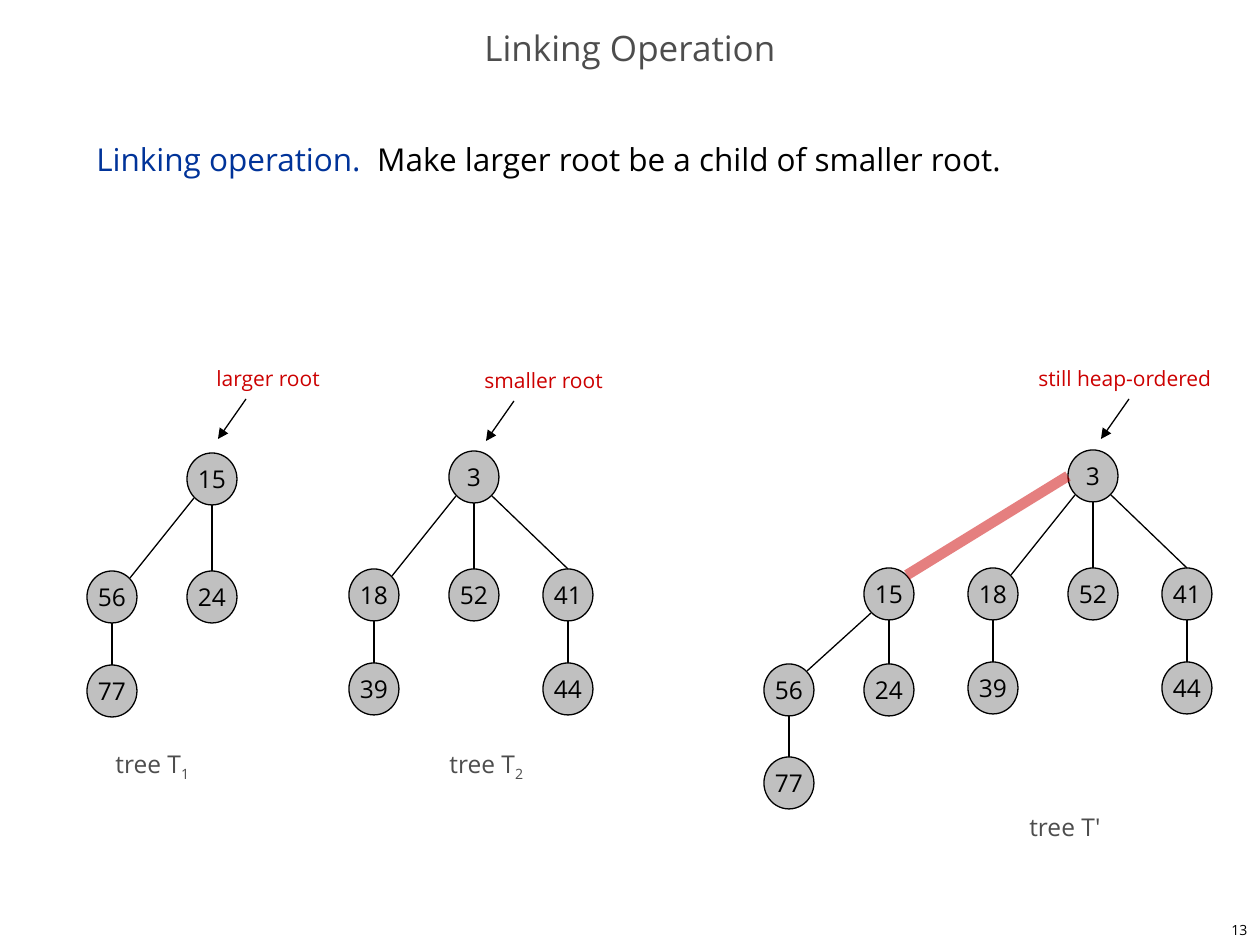
from collections import namedtuple

from lxml.etree import SubElement
from pptx import Presentation
from pptx.dml.color import RGBColor
from pptx.enum.shapes import MSO_CONNECTOR, MSO_SHAPE
from pptx.enum.text import MSO_ANCHOR, PP_ALIGN
from pptx.oxml.ns import qn
from pptx.util import Emu, Pt

Box = namedtuple("Box", "left top width height")
Node = namedtuple("Node", "key parent left top")

SCALE = 914400 / 126
FONT = "Open Sans"
NODE_WIDTH, NODE_HEIGHT = 50, 52
DIAGONAL = 7
WHITE = RGBColor(0xFF, 0xFF, 0xFF)
BLACK = RGBColor(0x00, 0x00, 0x00)
GRAY = RGBColor(0x4D, 0x4D, 0x4D)
SILVER = RGBColor(0xC0, 0xC0, 0xC0)
BLUE = RGBColor(0x00, 0x33, 0x99)
RED = RGBColor(0xCC, 0x00, 0x00)

FIRST_TREE = [
    Node("15", None, 100, 0),
    Node("56", "15", 0, 118),
    Node("24", "15", 100, 118),
    Node("77", "56", 0, 212),
]
SECOND_TREE = [
    Node("3", None, 100, 0),
    Node("18", "3", 0, 118),
    Node("52", "3", 100, 118),
    Node("41", "3", 194, 118),
    Node("39", "18", 0, 212),
    Node("44", "41", 194, 212),
]
LINKED_TREE = [
    Node("3", None, 304, 0),
    Node("15", "3", 100, 118),
    Node("18", "3", 204, 118),
    Node("52", "3", 304, 118),
    Node("41", "3", 398, 118),
    Node("56", "15", 0, 214),
    Node("24", "15", 100, 214),
    Node("39", "18", 204, 212),
    Node("44", "41", 398, 212),
    Node("77", "56", 0, 307),
]


def px(length):
    return Emu(round(length * SCALE))


def style_span(span, size, color):
    span.font.name = FONT
    span.font.size = Pt(size)
    span.font.color.rgb = color


def add_text(page, box, pieces, size, wrap=False):
    shape = page.shapes.add_textbox(*map(px, box))
    shape.text_frame.word_wrap = wrap
    para = shape.text_frame.paragraphs[0]
    for text, color in pieces:
        span = para.add_run()
        span.text = text
        style_span(span, size, color)
    return shape


def add_line(page, start, end, color=BLACK, width=0.75, opacity=None, arrow=False):
    line = page.shapes.add_connector(MSO_CONNECTOR.STRAIGHT, *map(px, start + end))
    line.line.width = Pt(width)
    line.line.color.rgb = color
    properties = line._element.spPr
    outline = properties.find(qn("a:ln"))
    if opacity:
        paint = outline.find(".//" + qn("a:srgbClr"))
        SubElement(paint, qn("a:alpha"), val=str(opacity * 1000))
    if arrow:
        SubElement(outline, qn("a:tailEnd"), type="triangle", w="med", len="med")
    SubElement(properties, qn("a:effectLst"))


def add_heading(page, box):
    title = page.shapes.title
    title.left, title.top, title.width, title.height = map(px, box)
    frame = title.text_frame
    frame.text = "Linking Operation"
    frame.vertical_anchor = MSO_ANCHOR.MIDDLE
    para = frame.paragraphs[0]
    para.alignment = PP_ALIGN.CENTER
    para.line_spacing = 0.7
    style_span(para.runs[0], 20, GRAY)


def add_statement(page, box):
    pieces = [
        ("Linking operation.  ", BLUE),
        ("Make larger root be a child of smaller root.", BLACK),
    ]
    shape = add_text(page, box, pieces, 18, wrap=True)
    shape.text_frame.paragraphs[0].line_spacing = Pt(26)


def add_page_number(page, box):
    frame = add_text(page, box, [("13", BLACK)], 8).text_frame
    frame.vertical_anchor = MSO_ANCHOR.MIDDLE
    frame.paragraphs[0].alignment = PP_ALIGN.RIGHT


def add_node(page, box, key):
    shape = page.shapes.add_shape(MSO_SHAPE.OVAL, *map(px, box))
    shape.shadow.inherit = False
    shape.fill.solid()
    shape.fill.fore_color.rgb = SILVER
    shape.line.color.rgb = BLACK
    shape.line.width = Pt(0.75)
    frame = shape.text_frame
    frame.text = key
    frame.word_wrap = False
    frame.vertical_anchor = MSO_ANCHOR.MIDDLE
    para = frame.paragraphs[0]
    para.alignment = PP_ALIGN.CENTER
    style_span(para.runs[0], 14, BLACK)


def add_edge(page, child, parent, linked):
    right = child.left + child.width
    middle = child.left + child.width // 2
    upper_right = (right - DIAGONAL, child.top + DIAGONAL)
    parent_low = parent.top + parent.height
    if linked:
        side = (parent.left, parent.top + parent.height // 2)
        add_line(page, upper_right, side, RED, width=6, opacity=50)
    elif child.left < parent.left:
        corner = (parent.left + DIAGONAL, parent_low - DIAGONAL)
        add_line(page, upper_right, corner)
    elif child.left > parent.left:
        corner = (parent.left + parent.width - DIAGONAL, parent_low - DIAGONAL)
        add_line(page, (middle, child.top), corner)
    else:
        add_line(page, (middle, child.top), (middle, parent_low))


def add_tree(page, left, top, nodes, linked_key=None):
    boxes = {
        node.key: Box(left + node.left, top + node.top, NODE_WIDTH, NODE_HEIGHT)
        for node in nodes
    }
    for key, box in boxes.items():
        add_node(page, box, key)
    for node in nodes:
        if node.parent:
            add_edge(page, boxes[node.key], boxes[node.parent], node.key == linked_key)


def add_caption(page, box, text, subscript=""):
    pieces = [(text, GRAY)] + ([(subscript, GRAY)] if subscript else [])
    shape = add_text(page, box, pieces, 14)
    for span in shape.text_frame.paragraphs[0].runs[1:]:
        span._r.get_or_add_rPr().set("baseline", "-25000")


def add_callout(page, box, text, arrow_left):
    add_text(page, box, [(text, RED)], 12)
    start = (box.left + arrow_left, box.top + 40)
    add_line(page, start, (start[0] - 28, start[1] + 40), arrow=True)


def main():
    deck = Presentation()
    deck.slide_width, deck.slide_height = px(1260), px(945)
    page = deck.slides.add_slide(deck.slide_layouts[5])
    page.background.fill.solid()
    page.background.fill.fore_color.rgb = WHITE

    add_heading(page, Box(0, 21, 1260, 63))
    add_statement(page, Box(84, 126, 1081, 746))
    add_page_number(page, Box(998, 914, 262, 31))

    add_tree(page, 87, 453, FIRST_TREE)
    add_tree(page, 349, 451, SECOND_TREE)
    add_tree(page, 764, 450, LINKED_TREE, linked_key="15")

    add_caption(page, Box(103, 743, 106, 42), "tree T", "1")
    add_caption(page, Box(437, 743, 106, 42), "tree T", "2")
    add_caption(page, Box(1017, 806, 101, 42), "tree T'")

    add_callout(page, Box(204, 359, 137, 38), "larger root", 42)
    add_callout(page, Box(472, 361, 150, 38), "smaller root", 42)
    add_callout(page, Box(1026, 359, 204, 38), "still heap-ordered", 103)

    deck.save("out.pptx")


if __name__ == "__main__":
    main()
